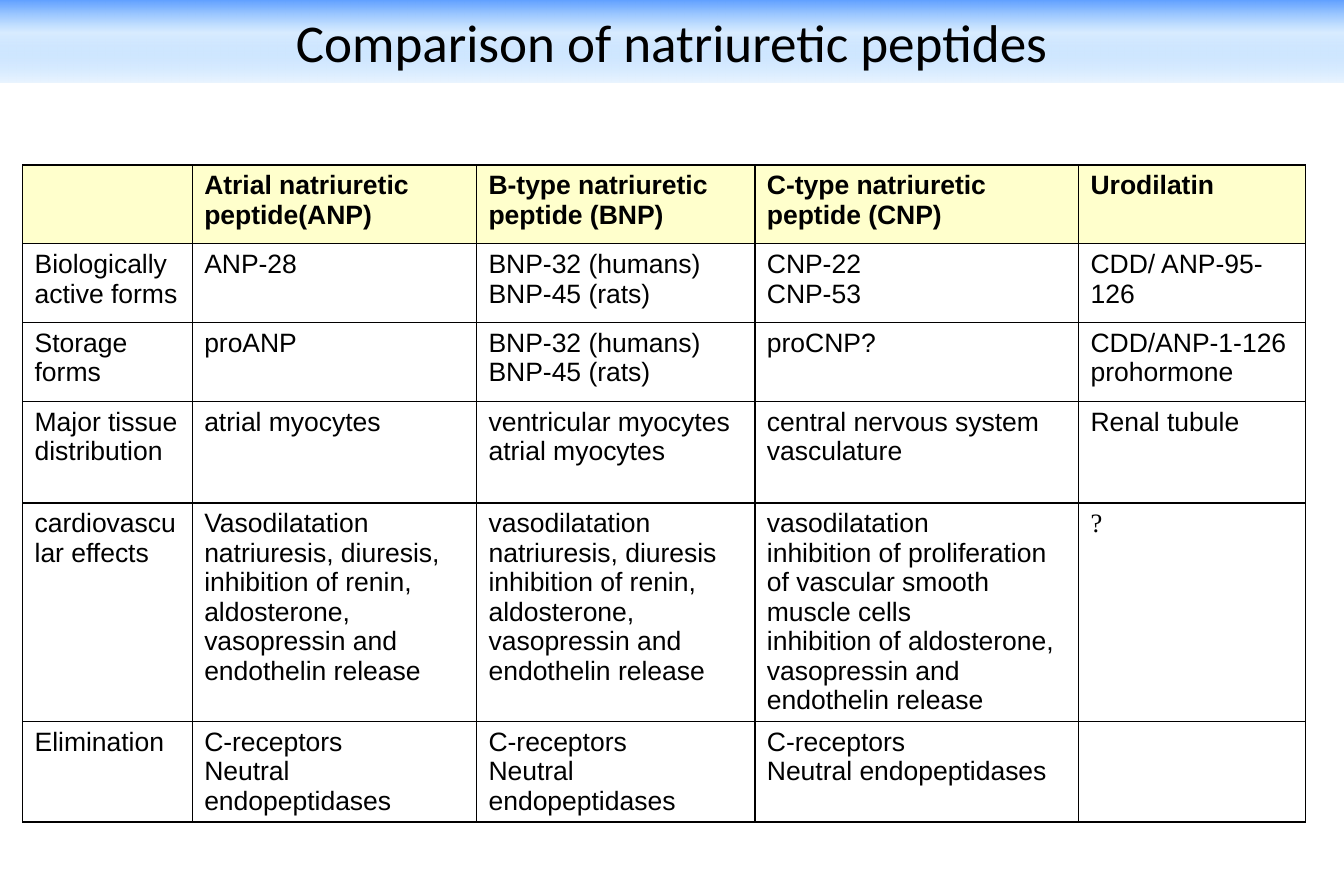
from lxml.etree import SubElement
from pptx import Presentation
from pptx.dml.color import RGBColor
from pptx.enum.text import MSO_ANCHOR, PP_ALIGN
from pptx.oxml import parse_xml
from pptx.oxml.ns import nsdecls, qn
from pptx.util import Inches, Pt

TITLE = "Comparison of natriuretic peptides"
TITLE_STOPS = [(0, "5E9EFF", 100), (40, "85C2FF", 31), (100, "EBF5FF", 100)]
COLUMN_WIDTHS = [1.42, 2.38, 2.33, 2.71, 1.9]
ROW_HEIGHTS = [0.66, 0.66, 0.66, 0.85, 1.83, 0.66]
BNP_FORMS = "BNP-32 (humans)\nBNP-45 (rats)"
ELIMINATION = "C-receptors\nNeutral endopeptidases"
PEPTIDES = [
    ["", "Atrial natriuretic peptide(ANP)", "B-type natriuretic peptide (BNP)",
     "C-type natriuretic peptide (CNP)", "Urodilatin"],
    ["Biologically active forms", "ANP-28", BNP_FORMS, "CNP-22\nCNP-53", "CDD/ ANP-95-126"],
    ["Storage forms", "proANP", BNP_FORMS, "proCNP?", "CDD/ANP-1-126 prohormone"],
    ["Major tissue distribution", "atrial myocytes", "ventricular myocytes\natrial myocytes",
     "central nervous system\nvasculature", "Renal tubule"],
    ["cardiovascular effects",
     "Vasodilatation natriuresis, diuresis, inhibition of renin, aldosterone, "
     "vasopressin and endothelin release",
     "vasodilatation\nnatriuresis, diuresis\ninhibition of renin, aldosterone, "
     "vasopressin and endothelin release",
     "vasodilatation\ninhibition of proliferation of vascular smooth muscle cells\n"
     "inhibition of aldosterone, vasopressin and endothelin release",
     "?"],
    ["Elimination", ELIMINATION, ELIMINATION, ELIMINATION, ""],
]


def colour(value):
    """Turn a hex string into a colour."""
    return RGBColor.from_string(value)


class SlideBuilder:
    """Hold the style and the current slide."""

    ink = "000000"
    border = "010000"
    header_fill = "FFFFCC"
    body_fill = "FFFFFF"

    def __init__(self, deck):
        """Add a title-only slide to the deck."""
        self.page = deck.slides.add_slide(deck.slide_layouts[5])

    def style(self, para, size, name, bold=False):
        """Set the font of a paragraph."""
        font = para.font
        font.size, font.name, font.bold = Pt(size), name, bold
        font.color.rgb = colour(self.ink)

    def title(self, text, left, top, width, height, stops):
        """Place the title on a vertical gradient band."""
        box = self.page.shapes.title
        box.left, box.top = Inches(left), Inches(top)
        box.width, box.height = Inches(width), Inches(height)
        marks = "".join(
            f'<a:gs pos="{place * 1000}"><a:srgbClr val="{value}">'
            f'<a:alpha val="{opacity * 1000}"/></a:srgbClr></a:gs>'
            for place, value, opacity in stops)
        box.fill.gradient()
        gradient = box.fill._xPr.find(qn("a:gradFill"))
        box.fill._xPr.replace(gradient, parse_xml(
            f'<a:gradFill {nsdecls("a")} rotWithShape="1"><a:gsLst>{marks}</a:gsLst>'
            '<a:lin ang="5400000" scaled="0"/></a:gradFill>'))
        frame = box.text_frame
        frame.text = text
        frame.vertical_anchor = MSO_ANCHOR.MIDDLE
        para = frame.paragraphs[0]
        para.alignment = PP_ALIGN.CENTER
        self.style(para, 32, "Calibri")

    def borders(self, cell):
        """Draw a thin line on all four sides of a cell."""
        properties = cell._tc.get_or_add_tcPr()
        for side in ("lnL", "lnR", "lnT", "lnB"):
            line = SubElement(properties, qn(f"a:{side}"), w=str(Pt(1)))
            fill = SubElement(line, qn("a:solidFill"))
            SubElement(fill, qn("a:srgbClr"), val=self.border)

    def table(self, rows, left, top, widths, heights):
        """Add a bordered table with a tinted bold header row."""
        table = self.page.shapes.add_table(
            len(rows), len(widths), Inches(left), Inches(top),
            Inches(sum(widths)), Inches(sum(heights))).table
        table.first_row = table.horz_banding = False
        for column, width in zip(table.columns, widths):
            column.width = Inches(width)
        for row, height in zip(table.rows, heights):
            row.height = Inches(height)
        for row_index, texts in enumerate(rows):
            header = row_index == 0
            for column_index, text in enumerate(texts):
                cell = table.cell(row_index, column_index)
                self.borders(cell)
                cell.fill.solid()
                cell.fill.fore_color.rgb = colour(self.header_fill if header else self.body_fill)
                cell.text = text
                name = "Times New Roman" if text == "?" else "Arial"
                for para in cell.text_frame.paragraphs:
                    self.style(para, 16, name, header)


def main():
    """Build and save the slide."""
    deck = Presentation()
    deck.slide_width, deck.slide_height = Inches(11.25), Inches(7.5)
    builder = SlideBuilder(deck)
    builder.title(TITLE, 0, 0, 11.25, 0.69, TITLE_STOPS)
    builder.table(PEPTIDES, 0.19, 1.38, COLUMN_WIDTHS, ROW_HEIGHTS)
    deck.save("out.pptx")


if __name__ == "__main__":
    main()
